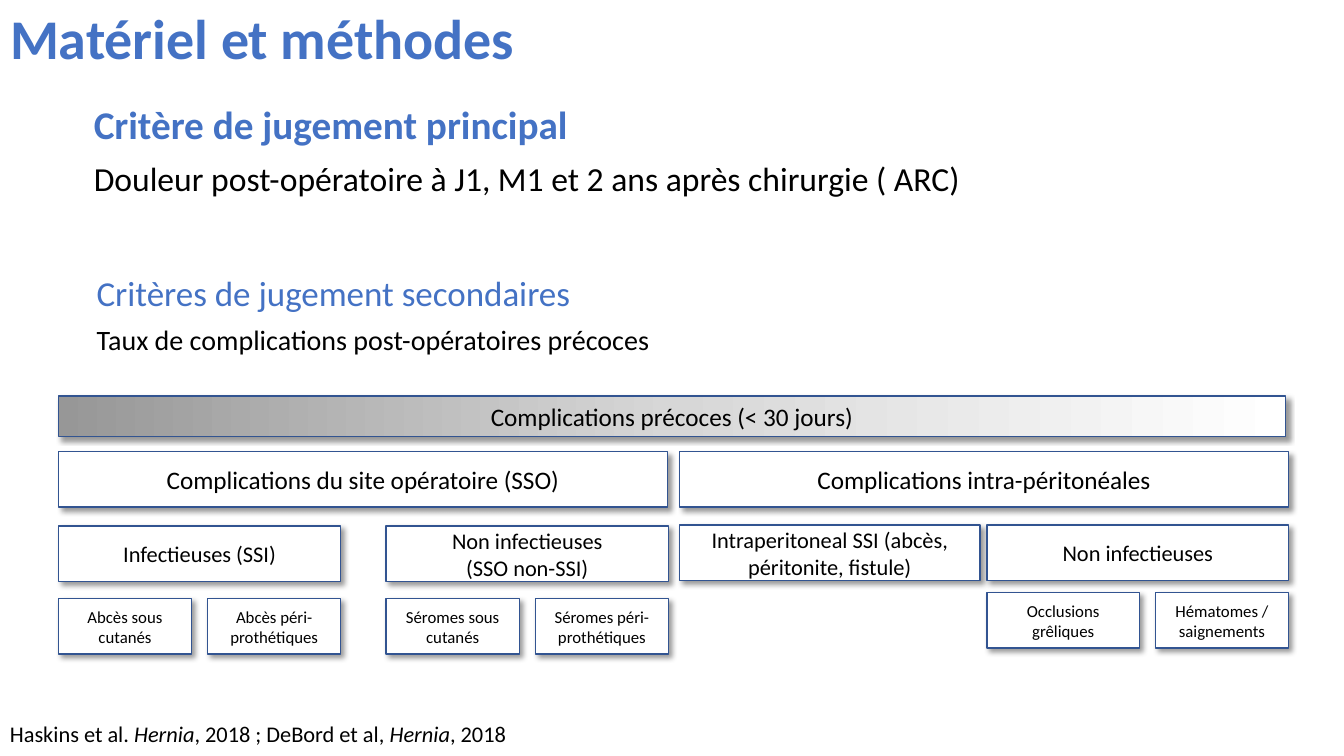
import pptx
import pptx.util
import pptx.oxml
import pptx.dml.color
import pptx.enum.shapes
import pptx.enum.text

PX = 9144
FONT = "Calibri"
HUES = {"blue": "4472C4", "edge": "325491", "ink": "000000", "white": "FFFFFF",
        "dark": "979797", "mid": "D7D7D7"}
ALIGN = pptx.enum.text.PP_ALIGN
MIDDLE = pptx.enum.text.MSO_ANCHOR.MIDDLE
NS = 'xmlns:a="http://schemas.openxmlformats.org/drawingml/2006/main"'
SHADE = (f'<a:effectLst {NS}><a:outerShdw blurRad="50800" dist="38100" dir="2700000" '
         f'algn="tl" rotWithShape="0"><a:srgbClr val="{HUES["ink"]}">'
         '<a:alpha val="40000"/></a:srgbClr></a:outerShdw></a:effectLst>')


def hue(name):
    """Return the named colour."""
    return pptx.dml.color.RGBColor.from_string(HUES[name])


def emu(*box):
    """Turn px lengths into EMU."""
    return [pptx.util.Emu(n * PX) for n in box]


def write(frame, text, size=18, color="ink", bold=False, align=ALIGN.LEFT, lead=None, before=None):
    """Add a paragraph to the frame, with *starred* parts in italics."""
    par = frame.paragraphs[0]
    if par.runs:
        par = frame.add_paragraph()
    par.alignment = align
    if lead:
        par.line_spacing = lead
    if before is not None:
        par.space_before = pptx.util.Pt(before)
    for i, part in enumerate(text.split("*")):
        run = par.add_run()
        run.text = part
        font = run.font
        font.name, font.size, font.bold = FONT, pptx.util.Pt(size), bold
        font.italic = i % 2 == 1
        font.color.rgb = hue(color)
    return par


def place(shape, box):
    """Move a placeholder to the box and return its text frame."""
    shape.left, shape.top, shape.width, shape.height = emu(*box)
    return shape.text_frame


def title(slide, box):
    """Fill the title."""
    frame = place(slide.shapes.title, box)
    frame.vertical_anchor = MIDDLE
    write(frame, "Matériel et méthodes", size=40, color="blue", bold=True, lead=0.9)


def body(slide, box):
    """Fill the body with the main criterion."""
    frame = place(slide.placeholders[1], box)
    look = {"align": ALIGN.JUSTIFY, "lead": 0.9, "before": 10}
    pars = [write(frame, "Critère de jugement principal", size=28, color="blue", bold=True, **look),
            write(frame, "Douleur post-opératoire à J1, M1 et 2 ans après chirurgie ( ARC)",
                  size=24, **look)]
    for par in pars:
        props = par._p.get_or_add_pPr()
        props.set("marL", "0")
        props.set("indent", "0")
        props.append(pptx.oxml.parse_xml(f"<a:buNone {NS}/>"))


def label(slide, box, text, **look):
    """Place one line of free text."""
    frame = slide.shapes.add_textbox(*emu(*box)).text_frame
    frame.word_wrap = False
    frame.auto_size = pptx.enum.text.MSO_AUTO_SIZE.SHAPE_TO_FIT_TEXT
    write(frame, text, **look)


def second(slide, box):
    """Place the secondary criteria."""
    x, y, w, h = box
    label(slide, (x, y, 509, 52), "Critères de jugement secondaires", size=25, color="blue")
    label(slide, (x, y + 51, w, h - 51), "Taux de complications post-opératoires précoces", size=20)


def tile(slide, box, text, size):
    """Draw a shadowed white box with centred text."""
    shape = slide.shapes.add_shape(pptx.enum.shapes.MSO_SHAPE.RECTANGLE, *emu(*box))
    shape.fill.solid()
    shape.fill.fore_color.rgb = hue("white")
    shape.line.color.rgb = hue("edge")
    shape.line.width = pptx.util.Pt(1)
    shape.element.spPr.append(pptx.oxml.parse_xml(SHADE))
    frame = shape.text_frame
    frame.word_wrap = True
    frame.vertical_anchor = MIDDLE
    for line in text.split("\n"):
        write(frame, line, size=size, align=ALIGN.CENTER)
    return shape


def fade(shape):
    """Give the shape a grey to white gradient."""
    shape.fill.gradient()
    shape.fill.gradient_angle = 0
    stops = shape.element.xpath(".//a:gsLst")[0]
    for stop in list(stops):
        stops.remove(stop)
    for pos, name in ((0, "dark"), (50, "mid"), (100, "white")):
        stops.append(pptx.oxml.parse_xml(
            f'<a:gs {NS} pos="{pos * 1000}"><a:srgbClr val="{HUES[name]}"/></a:gs>'))


def row(slide, x, y, gap, size, cells):
    """Set tiles side by side, each given as width and text."""
    for w, text in cells:
        tile(slide, (x, y, w, 55), text, size)
        x += w + gap


def tree(slide, box):
    """Draw the tree of early complications."""
    x, y, w, h = box
    right, last = x + 616, x + 921
    row(slide, x, y + 55, 12, 18, [(604, "Complications du site opératoire (SSO)"),
                                   (604, "Complications intra-péritonéales")])
    row(slide, x, y + 129, 45, 16, [(280, "Infectieuses (SSI)"),
                                    (280, "Non infectieuses\n(SSO non-SSI)")])
    for i, kind in enumerate(("Abcès", "Séromes")):
        row(slide, x + 325 * i, y + 201, 16, 12, [(132, f"{kind} sous cutanés"),
                                                  (132, f"{kind} péri-prothétiques")])
    row(slide, right, y + 128, 7, 16, [(298, "Intraperitoneal SSI (abcès, péritonite, fistule)"),
                                       (299, "Non infectieuses")])
    row(slide, last, y + 195, 16, 12, [(151, "Occlusions grêliques"),
                                       (132, "Hématomes / saignements")])
    fade(tile(slide, (x, y, w, h), "Complications précoces (< 30 jours)", 18))


def main():
    """Build and save the slide."""
    deck = pptx.Presentation()
    deck.slide_width, deck.slide_height = emu(1333, 750)
    slide = deck.slides.add_slide(deck.slide_layouts[1])
    title(slide, (0, 0, 1150, 83))
    body(slide, (83, 100, 1174, 469))
    second(slide, (86, 264, 575, 95))
    tree(slide, (58, 393, 1217, 40))
    label(slide, (0, 710, 519, 37), "Haskins et al. *Hernia*, 2018 ; DeBord et al, *Hernia*, 2018",
          size=16)
    deck.save("out.pptx")


if __name__ == "__main__":
    main()
